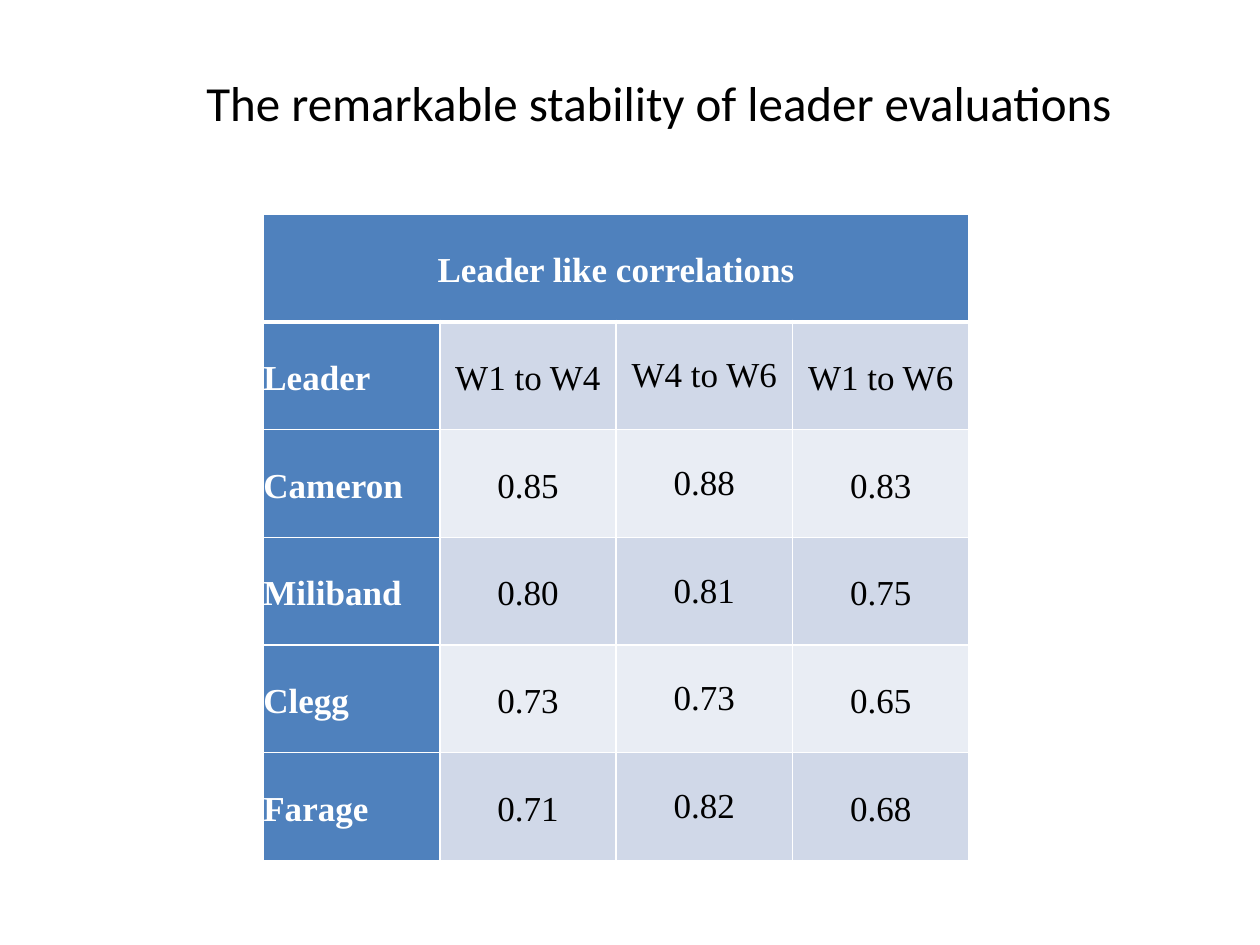
import pptx
import pptx.util
import pptx.dml.color
import pptx.enum.text
import pptx.oxml
import pptx.oxml.ns

WHITE = pptx.dml.color.RGBColor(0xFF, 0xFF, 0xFF)
BLACK = pptx.dml.color.RGBColor(0x00, 0x00, 0x00)
BLUE = pptx.dml.color.RGBColor(0x4F, 0x81, 0xBD)
DARK_BAND = pptx.dml.color.RGBColor(0xD0, 0xD8, 0xE8)
LIGHT_BAND = pptx.dml.color.RGBColor(0xE9, 0xED, 0xF4)
ALIGN = pptx.enum.text.PP_ALIGN

ROWS = [
    ["Leader like correlations", "", "", ""],
    ["Leader", "W1 to W4", "W4 to W6", "W1 to W6"],
    ["Cameron", "0.85", "0.88", "0.83"],
    ["Miliband", "0.80", "0.81", "0.75"],
    ["Clegg", "0.73", "0.73", "0.65"],
    ["Farage", "0.71", "0.82", "0.68"],
]
COLUMN_WIDTH = pptx.util.Inches(1.4)
ROW_HEIGHT = pptx.util.Inches(0.855)


def style_run(run, font_name, size, color, bold=False):
    run.font.name = font_name
    run.font.size = pptx.util.Pt(size)
    run.font.color.rgb = color
    run.font.bold = bold


def add_borders(cell, top, bottom):
    properties = cell._tc.get_or_add_tcPr()
    widths = {"lnL": 1, "lnR": 1, "lnT": top, "lnB": bottom}
    for position, (side, width) in enumerate(widths.items()):
        line = pptx.oxml.parse_xml(
            f'<a:{side} {pptx.oxml.ns.nsdecls("a")} w="{pptx.util.Pt(width)}">'
            f'<a:solidFill><a:srgbClr val="{WHITE}"/></a:solidFill></a:{side}>'
        )
        properties.insert(position, line)


presentation = pptx.Presentation()
presentation.slide_width = pptx.util.Inches(10)
presentation.slide_height = pptx.util.Inches(7.5)
slide = presentation.slides.add_slide(presentation.slide_layouts[6])

table_frame = slide.shapes.add_table(
    len(ROWS), len(ROWS[0]), pptx.util.Inches(2.09), pptx.util.Inches(1.7),
    COLUMN_WIDTH * len(ROWS[0]), ROW_HEIGHT * len(ROWS))
table = table_frame.table
table.first_col = True
for column in table.columns:
    column.width = COLUMN_WIDTH
for row in table.rows:
    row.height = ROW_HEIGHT
table.cell(0, 0).merge(table.cell(0, len(ROWS[0]) - 1))

for row_index, texts in enumerate(ROWS):
    band = DARK_BAND if row_index % 2 else LIGHT_BAND
    for column_index, text in enumerate(texts):
        cell = table.cell(row_index, column_index)
        heading = row_index == 0 or column_index == 0
        cell.fill.solid()
        cell.fill.fore_color.rgb = BLUE if heading else band
        add_borders(cell, 3 if row_index == 1 else 1, 3 if row_index == 0 else 1)
        if not text:
            continue
        cell.margin_left = cell.margin_right = 0
        cell.margin_top = cell.margin_bottom = 0
        cell.vertical_anchor = pptx.enum.text.MSO_ANCHOR.MIDDLE
        cell.text_frame.text = text
        paragraph = cell.text_frame.paragraphs[0]
        left_aligned = column_index == 0 and row_index > 0
        paragraph.alignment = ALIGN.LEFT if left_aligned else ALIGN.CENTER
        paragraph.line_spacing = 1.0 if column_index == 2 else 1.15
        style_run(paragraph.runs[0], "Times New Roman", 20,
                  WHITE if heading else BLACK, heading)

title = slide.shapes.add_textbox(
    pptx.util.Inches(1.54), pptx.util.Inches(0.53),
    pptx.util.Inches(7.64), pptx.util.Inches(0.57))
title.text_frame.word_wrap = True
title.text_frame.auto_size = pptx.enum.text.MSO_AUTO_SIZE.SHAPE_TO_FIT_TEXT
title.text_frame.text = "The remarkable stability of leader evaluations"
style_run(title.text_frame.paragraphs[0].runs[0], "Calibri", 28, BLACK)

presentation.save("out.pptx")
